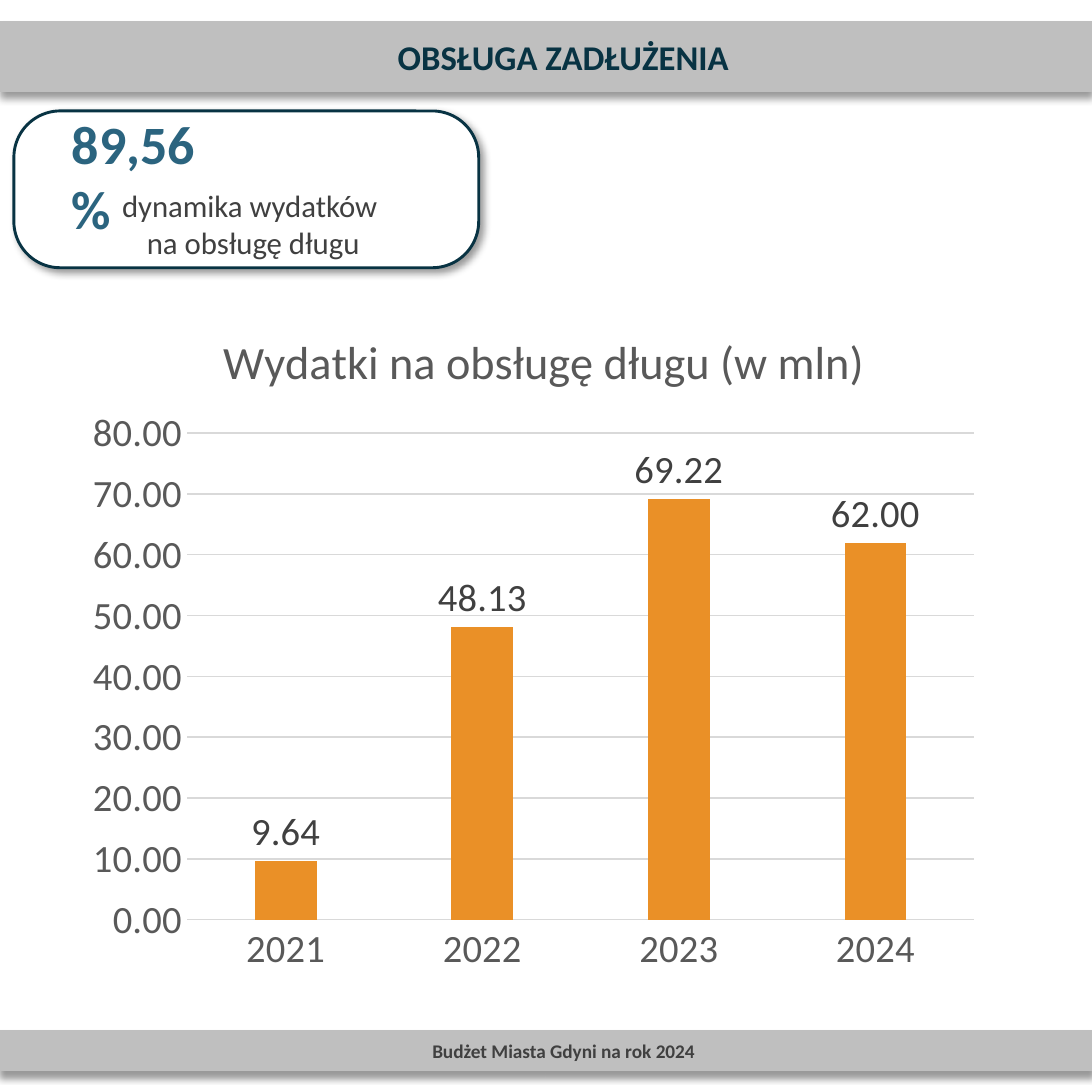
from dataclasses import dataclass

from lxml import etree
from pptx import Presentation
from pptx.chart.data import CategoryChartData
from pptx.dml.color import RGBColor
from pptx.enum.chart import XL_CHART_TYPE, XL_LABEL_POSITION, XL_TICK_MARK
from pptx.enum.shapes import MSO_SHAPE
from pptx.enum.text import MSO_ANCHOR, MSO_AUTO_SIZE, PP_ALIGN
from pptx.oxml import parse_xml
from pptx.oxml.ns import nsdecls, qn
from pptx.util import Inches, Pt

COLUMNS = XL_CHART_TYPE.COLUMN_CLUSTERED
OUTSIDE_END = XL_LABEL_POSITION.OUTSIDE_END
NO_TICK = XL_TICK_MARK.NONE
RECTANGLE = MSO_SHAPE.RECTANGLE
ROUNDED = MSO_SHAPE.ROUNDED_RECTANGLE
TOP, MIDDLE = MSO_ANCHOR.TOP, MSO_ANCHOR.MIDDLE
NO_FIT = MSO_AUTO_SIZE.NONE
LEFT, CENTER = PP_ALIGN.LEFT, PP_ALIGN.CENTER

WHITE = RGBColor(0xFF, 0xFF, 0xFF)
BAND_GREY = RGBColor(0xBF, 0xBF, 0xBF)
GRID_GREY = RGBColor(0xD9, 0xD9, 0xD9)
AXIS_GREY = RGBColor(0x59, 0x59, 0x59)
DARK_GREY = RGBColor(0x40, 0x40, 0x40)
NAVY = RGBColor(0x08, 0x33, 0x43)
TEAL = RGBColor(0x2B, 0x64, 0x7F)
ORANGE = RGBColor(0xEA, 0x90, 0x27)

FONT = "Calibri"
SIDE = 7.87
NUMBER_FORMAT = "#,##0.00"
DEBT_COSTS = {"2021": 9.64, "2022": 48.13, "2023": 69.22, "2024": 62.00}


@dataclass(frozen=True)
class TextStyle:
    size: float
    color: RGBColor
    bold: bool = False
    align: PP_ALIGN = CENTER


@dataclass(frozen=True)
class Band:
    top: float
    height: float
    text: str
    style: TextStyle


@dataclass(frozen=True)
class Caption:
    left: float
    top: float
    width: float
    height: float
    text: str
    style: TextStyle


HEADER = Band(0.16, 0.5, "OBSŁUGA ZADŁUŻENIA", TextStyle(18, NAVY, True))
FOOTER = Band(7.43, 0.28, "Budżet Miasta Gdyni na rok 2024", TextStyle(10, DARK_GREY, True))
CAPTIONS = (
    Caption(0.42, 0.75, 1.24, 1.05, "89,56 %", TextStyle(28, TEAL, True, LEFT)),
    Caption(0.1, 1.3, 3.45, 0.64, "dynamika wydatków \nna obsługę długu",
            TextStyle(16, DARK_GREY)),
)


def style_font(font, size: float, color: RGBColor, bold: bool = False) -> None:
    font.name = FONT
    font.size = Pt(size)
    font.bold = bold
    font.color.rgb = color


def write_text(shape, text: str, style: TextStyle, anchor: MSO_ANCHOR) -> None:
    frame = shape.text_frame
    frame.text = text
    frame.word_wrap = True
    frame.auto_size = NO_FIT
    frame.vertical_anchor = anchor
    for paragraph in frame.paragraphs:
        paragraph.alignment = style.align
        for run in paragraph.runs:
            style_font(run.font, style.size, style.color, style.bold)


def paint(shape, fill: RGBColor, line: RGBColor, line_width: float, shadow_angle: int) -> None:
    """Give a shape its fill, outline and soft outer shadow."""
    shape.fill.solid()
    shape.fill.fore_color.rgb = fill
    shape.line.color.rgb = line
    shape.line.width = Pt(line_width)
    for effects in shape._element.spPr.findall(qn("a:effectLst")):
        shape._element.spPr.remove(effects)
    shape._element.spPr.append(parse_xml(
        f'<a:effectLst {nsdecls("a")}><a:outerShdw blurRad="{Pt(4)}" dist="{Pt(3)}" '
        f'dir="{shadow_angle * 60000}" algn="t" rotWithShape="0"><a:srgbClr val="000000">'
        '<a:alpha val="40000"/></a:srgbClr></a:outerShdw></a:effectLst>'))


def format_band(shape, band: Band) -> None:
    shape.left, shape.top = Inches(0), Inches(band.top)
    shape.width, shape.height = Inches(SIDE), Inches(band.height)
    paint(shape, BAND_GREY, BAND_GREY, 1, 90)
    write_text(shape, band.text, band.style, MIDDLE)
    shape.text_frame.margin_left = Inches(0.35)


def add_callout(slide) -> None:
    callout = slide.shapes.add_group_shape().shapes
    frame = callout.add_shape(ROUNDED, Inches(0.1), Inches(0.8), Inches(3.35), Inches(1.13))
    frame.adjustments[0] = 0.296
    paint(frame, WHITE, NAVY, 1.5, 45)
    for caption in CAPTIONS:
        box = callout.add_textbox(Inches(caption.left), Inches(caption.top),
                                  Inches(caption.width), Inches(caption.height))
        write_text(box, caption.text, caption.style, TOP)


def place(element, index: int, **fractions: float) -> None:
    """Fix a chart part at fractions of the chart's size."""
    for old in element.findall(qn("c:layout")):
        element.remove(old)
    layout = etree.Element(qn("c:layout"))
    manual = etree.SubElement(layout, qn("c:manualLayout"))
    if "w" in fractions:
        etree.SubElement(manual, qn("c:layoutTarget"), val="inner")
    for side in ("xMode", "yMode"):
        etree.SubElement(manual, qn(f"c:{side}"), val="edge")
    for name, value in fractions.items():
        etree.SubElement(manual, qn(f"c:{name}"), val=str(value))
    element.insert(index, layout)


def add_cost_chart(slide) -> None:
    costs = CategoryChartData(number_format=NUMBER_FORMAT)
    costs.categories = list(DEBT_COSTS)
    costs.add_series("Series 1", list(DEBT_COSTS.values()))
    chart = slide.shapes.add_chart(COLUMNS, Inches(0.56), Inches(2.07),
                                   Inches(6.59), Inches(5.01), costs).chart
    style_font(chart.font, 20, AXIS_GREY)
    chart.has_legend = False
    heading = chart.chart_title.text_frame
    heading.text = "Wydatki na obsługę długu (w mln)"
    style_font(heading.paragraphs[0].runs[0].font, 24, AXIS_GREY)
    place(chart.chart_title._element, 1, x=0.15, y=0.05)
    place(chart._chartSpace.chart.plotArea, 0, x=0.12, y=0.21, w=0.86, h=0.7)

    years, amounts = chart.category_axis, chart.value_axis
    for axis in (years, amounts):
        axis.major_tick_mark = axis.minor_tick_mark = NO_TICK
        style_font(axis.tick_labels.font, 20, AXIS_GREY)
    amounts.minimum_scale, amounts.maximum_scale, amounts.major_unit = 0, 80, 10
    amounts.tick_labels.number_format = NUMBER_FORMAT
    amounts.tick_labels.number_format_is_linked = False
    amounts.format.line.fill.background()
    for line in (years.format.line, amounts.major_gridlines.format.line):
        line.color.rgb = GRID_GREY
        line.width = Pt(0.75)

    plot = chart.plots[0]
    plot.vary_by_categories = False
    plot.gap_width, plot.overlap = 219, -27
    bars = plot.series[0]
    bars.format.fill.solid()
    bars.format.fill.fore_color.rgb = ORANGE
    labels = bars.data_labels
    labels.show_value = True
    labels.position = OUTSIDE_END
    labels.number_format = NUMBER_FORMAT
    labels.number_format_is_linked = False
    style_font(labels.font, 20, DARK_GREY)


def main() -> None:
    deck = Presentation()
    deck.slide_width = deck.slide_height = Inches(SIDE)
    slide = deck.slides.add_slide(deck.slide_layouts[5])
    format_band(slide.shapes.title, HEADER)
    footer = slide.shapes.add_shape(RECTANGLE, 0, 0, Inches(SIDE), Inches(FOOTER.height))
    format_band(footer, FOOTER)
    add_callout(slide)
    add_cost_chart(slide)
    deck.save("out.pptx")


if __name__ == "__main__":
    main()
